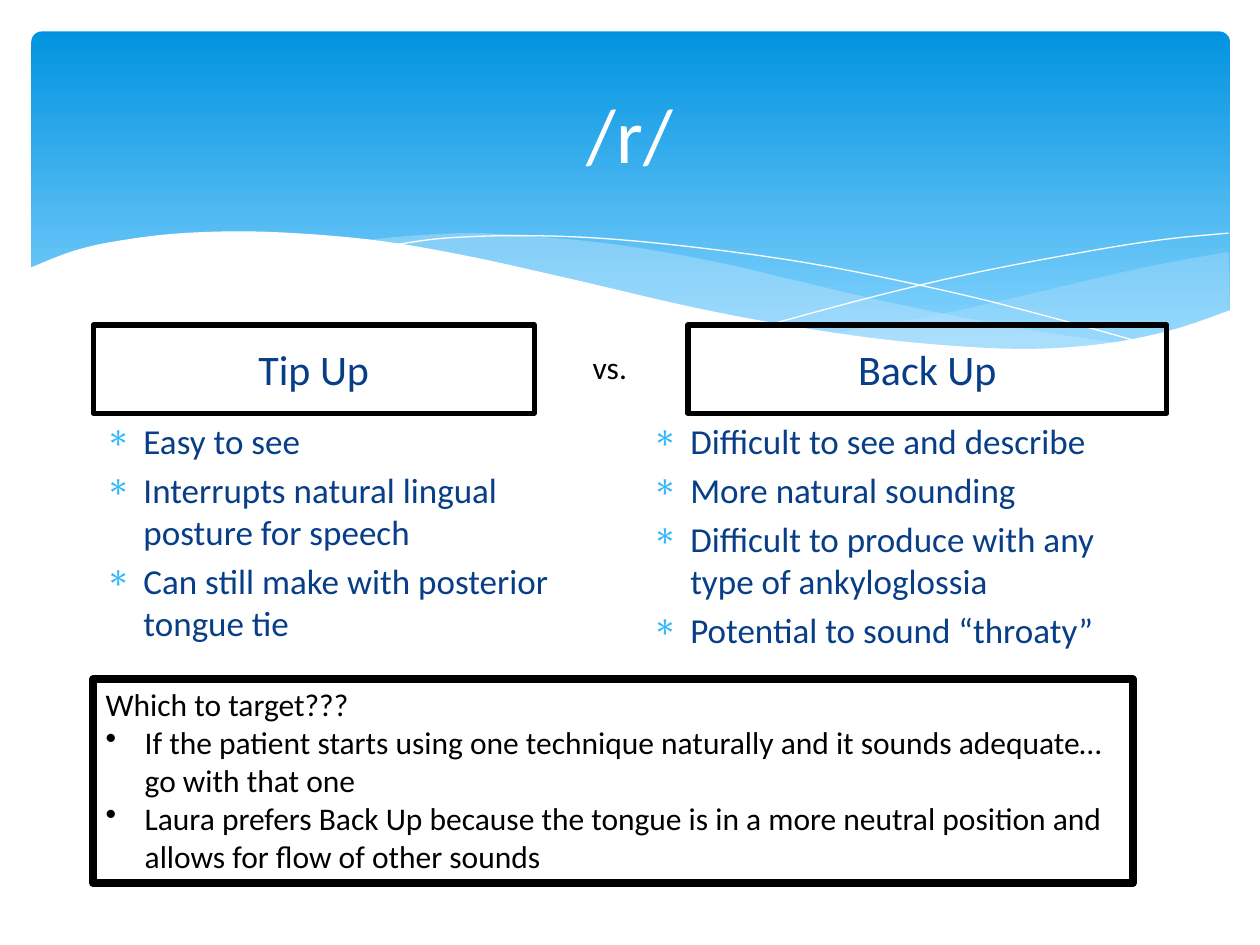
from dataclasses import dataclass

from lxml.etree import SubElement
from pptx import Presentation
from pptx.dml.color import RGBColor
from pptx.enum.shapes import MSO_SHAPE
from pptx.enum.text import MSO_ANCHOR, PP_ALIGN
from pptx.oxml.ns import qn
from pptx.util import Pt

PX = 9144


@dataclass(frozen=True)
class Theme:
    """Colours, type sizes and font of the slide."""
    font: str = "Calibri"
    white: str = "FFFFFF"
    black: str = "000000"
    navy: str = "073E87"
    bullet: str = "31B6FD"
    sky_top: str = "0293E0"
    sky_bottom: str = "83D3FE"
    wave: str = "C6E7FC"
    title: int = 44
    heading: int = 24
    body: int = 20
    note: int = 18


THEME = Theme()

RIGHT_WAVE = [
    [(975, 200), (935, 207), (891, 216), (832, 230), (753, 248), (661, 265)],
    [(661, 265), (719, 272), (781, 277), (854, 276), (913, 267), (976, 247)],
]
MIDDLE_WAVE = [
    [(893, 273), (807, 260), (706, 240), (629, 222), (569, 208), (502, 196),
     (442, 189), (380, 185), (328, 187), (286, 191)],
    [(286, 191), (362, 203), (449, 222), (566, 248), (650, 264), (736, 275),
     (818, 278), (893, 273)],
]
FRONT_WAVE = [
    [(977, 246), (930, 262), (875, 273), (809, 277), (726, 272), (648, 262),
     (555, 245), (447, 220), (365, 202), (292, 190), (211, 184), (146, 185),
     (95, 191), (59, 199), (23, 213)],
    [(23, 329), (977, 329)],
]
FALLING_LINE = [[(309, 195), (353, 189), (416, 187), (489, 190), (582, 200),
                 (665, 213), (760, 233), (831, 251), (907, 272)]]
RISING_LINE = [[(613, 257), (695, 235), (776, 216), (866, 199), (924, 190), (975, 185)]]


def rgb(colour):
    """Turn a hex string into a colour."""
    return RGBColor.from_string(colour)


def emu(box):
    """Turn a box in px into EMU."""
    return [value * PX for value in box]


def smooth(points, steps=6):
    """Return points along a Catmull-Rom curve through the given points."""
    if len(points) < 3:
        return points
    padded = [points[0], *points, points[-1]]
    curve = []
    for a, b, c, d in zip(padded, padded[1:], padded[2:], padded[3:]):
        for step in range(steps):
            t = step / steps
            curve.append(tuple(
                (2 * q + (r - p) * t + (2 * p - 5 * q + 4 * r - s) * t ** 2
                 + (3 * q - p - 3 * r + s) * t ** 3) / 2
                for p, q, r, s in zip(a, b, c, d)))
    return curve + [points[-1]]


def add_curve(slide, box, edges, fill=None, opacity=100):
    """Draw smooth edges as a filled area, or as a hairline without fill."""
    points = [(round((box[0] + x) * PX), round((box[1] + y) * PX))
              for edge in edges for x, y in smooth(edge)]
    builder = slide.shapes.build_freeform(*points[0])
    builder.add_line_segments(points[1:], close=fill is not None)
    shape = builder.convert_to_shape()
    shape.shadow.inherit = False
    if fill is None:
        shape.fill.background()
        shape.line.color.rgb = rgb(THEME.white)
        shape.line.width = 0
        return
    shape.line.fill.background()
    shape.fill.solid()
    shape.fill.fore_color.rgb = rgb(fill)
    if opacity < 100:
        colour = shape.fill._xPr.find(".//" + qn("a:srgbClr"))
        SubElement(colour, qn("a:alpha"), val=str(opacity * 1000))


def add_text(slide, box, lines, size, colour, align=PP_ALIGN.LEFT,
             anchor=MSO_ANCHOR.TOP, spacing=0.0, border=0):
    """Place lines of text in a box, framed when a border width is given."""
    if border:
        shape = slide.shapes.add_shape(MSO_SHAPE.RECTANGLE, *emu(box))
        shape.shadow.inherit = False
        shape.fill.background()
        shape.line.color.rgb = rgb(THEME.black)
        shape.line.width = Pt(border)
    else:
        shape = slide.shapes.add_textbox(*emu(box))
    frame = shape.text_frame
    frame.word_wrap = True
    frame.vertical_anchor = anchor
    frame.text = "\n".join(lines)
    for paragraph in frame.paragraphs:
        paragraph.alignment = align
        paragraph.space_before = Pt(size * spacing)
        font = paragraph.runs[0].font
        font.name, font.size, font.color.rgb = THEME.font, Pt(size), rgb(colour)
    return frame.paragraphs


def add_bullets(paragraphs, character, indent, colour):
    """Give paragraphs a hanging bullet."""
    for paragraph in paragraphs:
        properties = paragraph._p.get_or_add_pPr()
        properties.set("marL", str(indent * PX))
        properties.set("indent", str(-indent * PX))
        SubElement(SubElement(properties, qn("a:buClr")), qn("a:srgbClr"), val=colour)
        SubElement(properties, qn("a:buChar"), char=character)


def add_header(slide, box, title):
    """Draw the sky band with its waves and the title."""
    left, top, width, _ = box
    band = slide.shapes.add_shape(
        MSO_SHAPE.ROUNDED_RECTANGLE, *emu((left + 25, top + 25, width - 49, 270)))
    band.adjustments[0] = 0.03
    band.shadow.inherit = False
    band.line.fill.background()
    band.fill.gradient()
    band.fill.gradient_angle = 270
    stops = [(0, THEME.sky_top), (0.9, THEME.sky_bottom)]
    for stop, (position, colour) in zip(band.fill.gradient_stops, stops):
        stop.position = position
        stop.color.rgb = rgb(colour)
    add_curve(slide, box, RIGHT_WAVE, THEME.wave, 29)
    add_curve(slide, box, MIDDLE_WAVE, THEME.wave, 40)
    add_curve(slide, box, FALLING_LINE)
    add_curve(slide, box, RISING_LINE)
    add_curve(slide, box, FRONT_WAVE, THEME.white)
    add_text(slide, (left + 50, top + 37, width - 100, 137), [title], THEME.title,
             THEME.white, PP_ALIGN.CENTER, MSO_ANCHOR.MIDDLE)


def add_technique(slide, box, heading, heading_left, heading_width, points):
    """Place a framed heading over a bulleted list."""
    left, top, width, height = box
    add_text(slide, (left + heading_left, top, heading_width, 70), [heading],
             THEME.heading, THEME.navy, PP_ALIGN.CENTER, MSO_ANCHOR.MIDDLE, 0.2, 3)
    paragraphs = add_text(slide, (left, top + 70, width, height - 70), points,
                          THEME.body, THEME.navy, spacing=0.2)
    add_bullets(paragraphs, "∗", 30, THEME.bullet)


def add_advice(slide, box, question, answers):
    """Place the framed question with its bulleted answers."""
    paragraphs = add_text(slide, box, [question, *answers], THEME.note,
                          THEME.black, border=4.5)
    add_bullets(paragraphs[1:], "•", 31, THEME.black)


def main():
    """Build the slide and save it."""
    presentation = Presentation()
    presentation.slide_width, presentation.slide_height = emu((1000, 750))
    slide = presentation.slides.add_slide(presentation.slide_layouts[6])
    add_header(slide, (0, 0, 1000, 329), "/r/")
    add_technique(slide, (74, 258, 418, 269), "Tip Up", 0, 350, [
        "Easy to see",
        "Interrupts natural lingual posture for speech",
        "Can still make with posterior tongue tie"])
    add_technique(slide, (508, 258, 418, 289), "Back Up", 38, 380, [
        "Difficult to see and describe",
        "More natural sounding",
        "Difficult to produce with any type of ankyloglossia",
        "Potential to sound “throaty”"])
    add_advice(slide, (74, 539, 825, 162), "Which to target???", [
        "If the patient starts using one technique naturally and it sounds "
        "adequate…go with that one",
        "Laura prefers Back Up because the tongue is in a more neutral position "
        "and allows for flow of other sounds"])
    add_text(slide, (444, 271, 80, 40), ["vs."], THEME.note, THEME.black, PP_ALIGN.CENTER)
    presentation.save("out.pptx")


if __name__ == "__main__":
    main()
